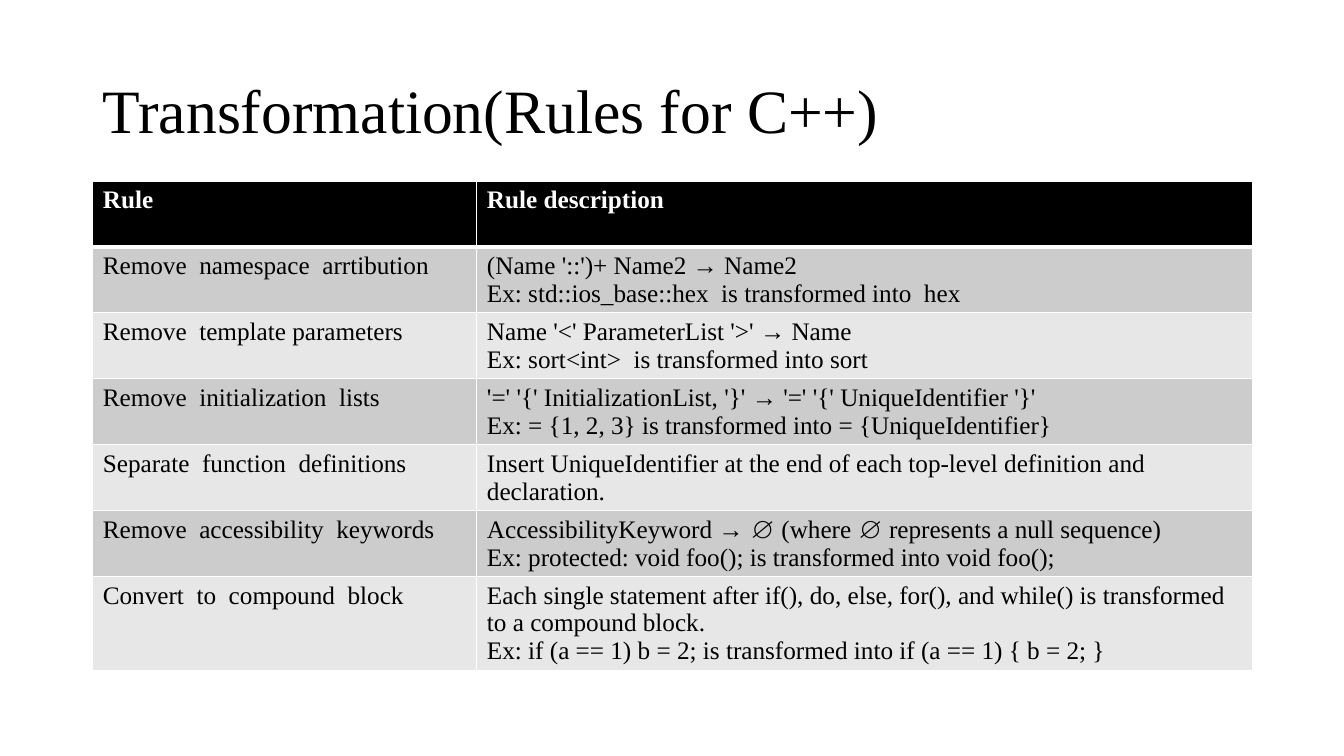
from dataclasses import dataclass
from lxml import etree
from pptx import Presentation
from pptx.dml.color import RGBColor
from pptx.enum.text import MSO_ANCHOR, PP_ALIGN
from pptx.util import Pt

MIDDLE = MSO_ANCHOR.MIDDLE
LEFT = PP_ALIGN.LEFT
PX = 9144
NS = "http://schemas.openxmlformats.org/drawingml/2006/main"


@dataclass(frozen=True)
class Theme:
    font: str = "Times New Roman"
    ink: str = "000000"
    paper: str = "FFFFFF"
    bands: tuple = ("CCCCCC", "E7E7E7")
    title: int = 44
    body: int = 18
    thin: int = 1
    thick: int = 3


THEME = Theme()
RULES = [
    ("Remove  namespace  arrtibution",
     ["(Name '::')+ Name2 → Name2",
      "Ex: std::ios_base::hex  is transformed into  hex"]),
    ("Remove  template parameters",
     ["Name '<' ParameterList '>' → Name",
      "Ex: sort<int>  is transformed into sort"]),
    ("Remove  initialization  lists",
     ["'=' '{' InitializationList, '}' → '=' '{' UniqueIdentifier '}'",
      "Ex: = {1, 2, 3} is transformed into = {UniqueIdentifier}"]),
    ("Separate  function  definitions",
     ["Insert UniqueIdentifier at the end of each top-level definition and declaration."]),
    ("Remove  accessibility  keywords",
     ["AccessibilityKeyword → ∅ (where ∅ represents a null sequence)",
      "Ex: protected: void foo(); is transformed into void foo();"]),
    ("Convert  to  compound  block",
     ["Each single statement after if(), do, else, for(), and while() is transformed to a compound block.",
      "Ex: if (a == 1) b = 2; is transformed into if (a == 1) { b = 2; }"]),
]


def emu(box):
    return [n * PX for n in box]


def add_run(para, text, size, color, bold=False):
    run = para.add_run()
    run.text = text
    font = run.font
    font.name = THEME.font
    font.size = Pt(size)
    font.bold = bold
    font.color.rgb = RGBColor.from_string(color)


def add_title(slide, box, text):
    title = slide.shapes.title
    title.left, title.top, title.width, title.height = emu(box)
    frame = title.text_frame
    frame.word_wrap = True
    frame.vertical_anchor = MIDDLE
    para = frame.paragraphs[0]
    para.alignment = LEFT
    para.line_spacing = 0.9
    add_run(para, text, THEME.title, THEME.ink)


def set_edges(cell, top, bottom):
    props = cell._tc.get_or_add_tcPr()
    widths = {"lnL": THEME.thin, "lnR": THEME.thin, "lnT": top, "lnB": bottom}
    for tag, width in widths.items():
        line = etree.SubElement(props, f"{{{NS}}}{tag}", w=str(Pt(width)))
        fill = etree.SubElement(line, f"{{{NS}}}solidFill")
        etree.SubElement(fill, f"{{{NS}}}srgbClr", val=THEME.paper)


def fill_cell(cell, lines, row):
    head = row == 0
    set_edges(cell, THEME.thick if row == 1 else THEME.thin,
              THEME.thick if head else THEME.thin)
    back = THEME.ink if head else THEME.bands[(row - 1) % 2]
    cell.fill.solid()
    cell.fill.fore_color.rgb = RGBColor.from_string(back)
    frame = cell.text_frame
    for i, text in enumerate(lines):
        para = frame.add_paragraph() if i else frame.paragraphs[0]
        add_run(para, text, THEME.body, THEME.paper if head else THEME.ink, head)


def add_rules(slide, box, split, rules):
    rows = [("Rule", ["Rule description"])] + rules
    table = slide.shapes.add_table(len(rows), 2, *emu(box)).table
    for col, width in zip(table.columns, (split, box[2] - split)):
        col.width = width * PX
    for r, (name, lines) in enumerate(rows):
        table.rows[r].height = box[3] // len(rows) * PX
        fill_cell(table.cell(r, 0), [name], r)
        fill_cell(table.cell(r, 1), lines, r)


def main():
    deck = Presentation()
    deck.slide_width, deck.slide_height = emu((1333, 750))
    slide = deck.slides.add_slide(deck.slide_layouts[5])
    add_title(slide, (92, 40, 1150, 145), "Transformation(Rules for C++)")
    add_rules(slide, (92, 180, 1150, 455), 381, RULES)
    deck.save("out.pptx")


if __name__ == "__main__":
    main()
